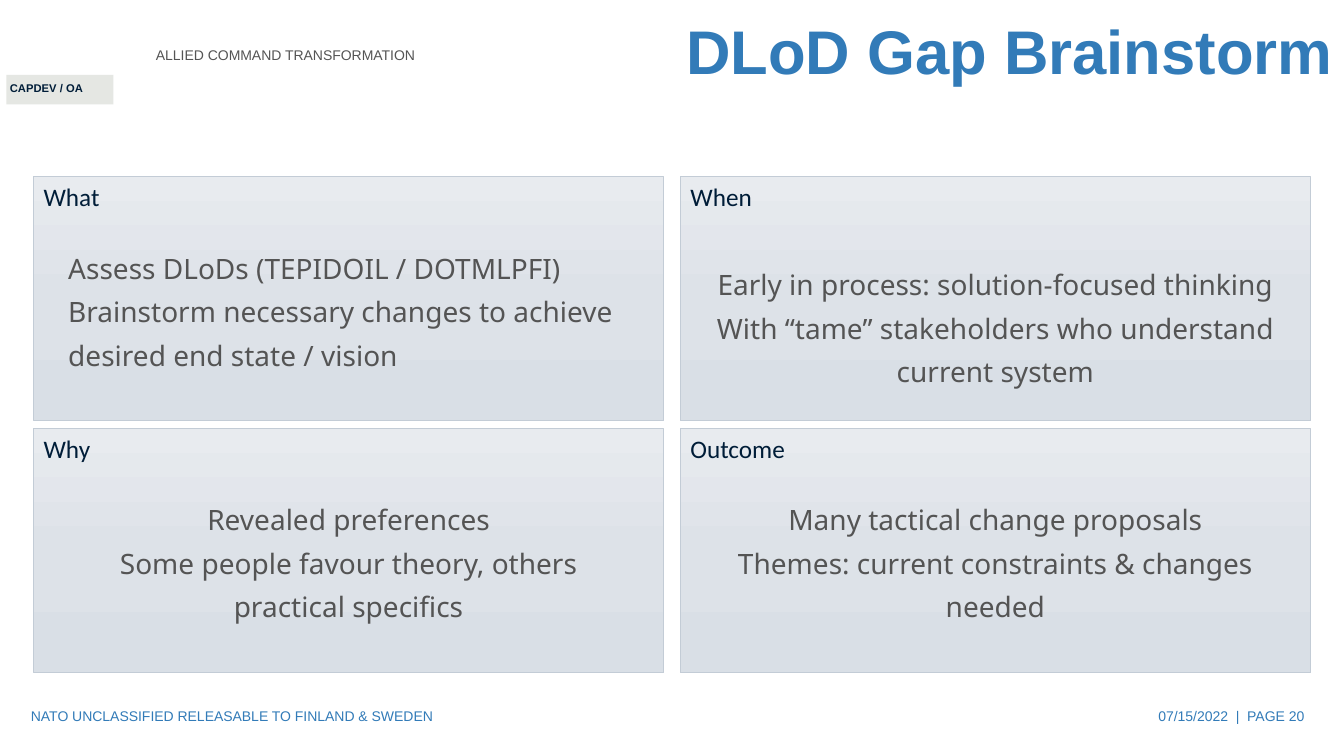
from copy import deepcopy

from pptx import Presentation, util as u
from pptx.dml.color import RGBColor
from pptx.enum import shapes, text

NAVY, BLUE, GREY = "001D38", "327BB8", "545454"
LEFT, CENTER, RIGHT = text.PP_ALIGN.LEFT, text.PP_ALIGN.CENTER, text.PP_ALIGN.RIGHT
TOP, MIDDLE = text.MSO_ANCHOR.TOP, text.MSO_ANCHOR.MIDDLE


def color(code):
    return RGBColor.from_string(code)


def write(frame, lines, size=10, font="Arial", ink=BLUE, bold=False, align=LEFT,
          anchor=MIDDLE, spacing=None, wrap=True, grow=False):
    frame.word_wrap = wrap
    frame.auto_size = (text.MSO_AUTO_SIZE.SHAPE_TO_FIT_TEXT if grow
                       else text.MSO_AUTO_SIZE.NONE)
    frame.vertical_anchor = anchor
    for index, line in enumerate(lines):
        para = frame.paragraphs[0] if index == 0 else frame.add_paragraph()
        para.alignment = align
        if spacing:
            para.line_spacing = spacing
        span = para.add_run()
        span.text = line
        span.font.name, span.font.size, span.font.bold = font, u.Pt(size), bold
        span.font.color.rgb = color(ink)


class SlideBuilder:
    panel_stops = ((0, "E8EBEF"), (0.5, "DDE2E8"), (1, "D9DFE6"))
    panel_line = "C3CCD6"

    def __init__(self, deck):
        self.page = deck.slides.add_slide(deck.slide_layouts[5])

    def title(self, line, *area, **style):
        box = self.page.shapes.title
        box.left, box.top, box.width, box.height = map(u.Cm, area)
        write(box.text_frame, [line], **style)

    def label(self, lines, *area, **style):
        box = self.page.shapes.add_textbox(*map(u.Cm, area))
        write(box.text_frame, lines, **style)

    def block(self, *area):
        box = self.page.shapes.add_shape(shapes.MSO_SHAPE.RECTANGLE, *map(u.Cm, area))
        box.shadow.inherit = False
        return box

    def tag(self, fill, *area):
        box = self.block(*area)
        box.fill.solid()
        box.fill.fore_color.rgb = color(fill)
        box.line.fill.background()

    def panel(self, heading, *area):
        box = self.block(*area)
        box.fill.gradient()
        box.fill.gradient_angle = 270
        # A new gradient has two stops; add the third
        first = box._element.spPr.xpath("a:gradFill/a:gsLst/a:gs")[0]
        first.addnext(deepcopy(first))
        for stop, (position, code) in zip(box.fill.gradient_stops, self.panel_stops):
            stop.position = position
            stop.color.rgb = color(code)
        box.line.color.rgb = color(self.panel_line)
        box.line.width = u.Pt(0.5)
        write(box.text_frame, [heading], size=18, font="Calibri", ink=NAVY, anchor=TOP)


def main():
    deck = Presentation()
    deck.slide_width, deck.slide_height = u.Cm(33.87), u.Cm(19.05)
    slide = SlideBuilder(deck)

    # Header
    slide.label(["ALLIED COMMAND TRANSFORMATION"], 3.68, 0.64, 15, 1.5, ink=GREY)
    slide.tag("E5E7E3", 0.16, 1.89, 2.7, 0.74)
    slide.label(["CAPDEV / OA"], 0, 1.93, 2.36, 0.6, size=8, ink=NAVY, bold=True,
                anchor=TOP, wrap=False, grow=True)
    slide.title("DLoD Gap Brainstorm", 4.65, 0, 29.21, 2.74, size=44, bold=True,
                align=RIGHT, spacing=0.9)

    # Two by two panels: heading, top of the body, alignment, body
    panels = [
        ("What", 5.94, LEFT, ["Assess DLoDs (TEPIDOIL / DOTMLPFI)",
                              "Brainstorm necessary changes to achieve desired end state / vision"]),
        ("When", 6.35, CENTER, ["Early in process: solution-focused thinking",
                                "With “tame” stakeholders who understand current system"]),
        ("Why", 12.27, CENTER, ["Revealed preferences",
                                "Some people favour theory, others practical specifics"]),
        ("Outcome", 12.27, CENTER, ["Many tactical change proposals",
                                    "Themes: current constraints & changes needed"]),
    ]
    for index, (heading, body_top, align, lines) in enumerate(panels):
        row, column = divmod(index, 2)
        left, top = 0.85 + column * 16.3, 4.45 + row * 6.35
        slide.panel(heading, left, top, 15.88, 6.15)
        slide.label(lines, left + 0.62, body_top, 14.63, 3.58, size=20,
                    font="Noto Sans", ink=GREY, align=align, spacing=1.3, grow=True)

    # Footer
    slide.label(["NATO UNCLASSIFIED RELEASABLE TO FINLAND & SWEDEN"], 0.53, 17.53, 11.43, 1.02)
    slide.label(["07/15/2022  |  PAGE 20"], 25.5, 17.53, 7.62, 1.02, align=RIGHT)

    deck.save("out.pptx")


if __name__ == "__main__":
    main()
